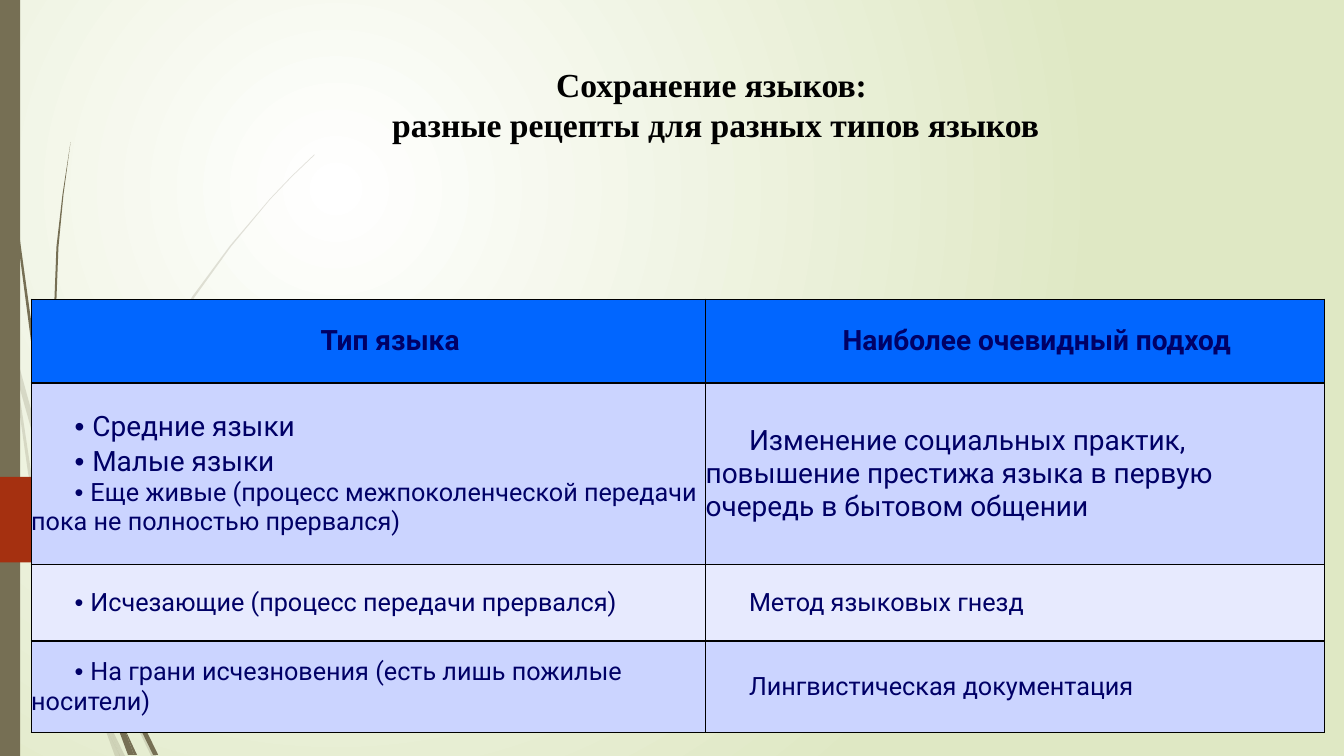
"""Build a slide with a table of language types and approaches to preserving them."""
from dataclasses import dataclass

from lxml import etree
from pptx import Presentation
from pptx import util as u
from pptx.dml.color import RGBColor
from pptx.enum import shapes, text
from pptx.oxml import ns


@dataclass(frozen=True)
class Theme:
    olive: str = "766F54"
    rust: str = "A53010"
    glow: str = "FFFFFF"
    meadow: str = "DFE8C4"
    ink: str = "000000"
    navy: str = "000066"
    header: str = "0166FF"
    bands: tuple = ("CBD4FF", "E7EAFE")
    title_font: str = "Times New Roman"
    body_font: str = "Roboto"
    bullet_font: str = "Arial"
    title_size: int = 24
    large: int = 20
    small: int = 18
    border: float = 1
    indent: int = 31


PALE_BLADES = [
    [(11, 350), (9, 322), (0, 282), (0, 299), (10, 344)],
    [(58, 522), (84, 599), (85, 586), (62, 520), (14, 345), (17, 376)],
    [(92, 607), (88, 596), (88, 610), (123, 694), (150, 750), (155, 750), (127, 692)],
    [(119, 750), (124, 750), (105, 711)],
    [(93, 683), (70, 619), (31, 469), (17, 376), (11, 350), (28, 470), (65, 621),
     (92, 693), (101, 714), (99, 707)],
    [(84, 599), (87, 646), (93, 683), (96, 692), (105, 711), (103, 706), (91, 646),
     (88, 610), (88, 608)],
    [(88, 584), (92, 522), (110, 462), (132, 405), (160, 349), (193, 295), (229, 245),
     (268, 198), (290, 175), (312, 154), (312, 153), (289, 175), (268, 197), (228, 244),
     (191, 294), (158, 348), (129, 403), (107, 461), (89, 522), (85, 584), (88, 596)],
    [(101, 714), (114, 750), (119, 750)],
    [(88, 608), (88, 596), (85, 586), (84, 599)],
    [(96, 692), (93, 683), (99, 707), (101, 714), (119, 750), (105, 711)],
]
DARK_BLADES = [
    [(7, 110), (17, 233), (33, 355), (56, 477), (57, 481), (55, 453), (36, 355),
     (19, 232), (8, 109), (5, 48), (4, 0), (3, 0), (4, 48)],
    [(88, 592), (106, 645), (106, 631), (93, 590), (60, 472), (64, 505)],
    [(113, 649), (110, 641), (111, 656), (132, 708), (152, 749), (157, 749), (136, 706)],
    [(110, 691), (98, 657), (72, 556), (64, 505), (57, 477), (68, 557), (93, 659),
     (111, 708), (117, 722), (116, 717)],
    [(60, 472), (58, 453), (54, 349), (58, 245), (63, 193), (70, 141), (62, 193),
     (56, 245), (52, 349), (55, 449)],
    [(133, 749), (136, 749), (122, 719)],
    [(57, 477), (64, 505), (60, 472), (55, 449), (55, 453)],
    [(111, 633), (125, 552), (158, 476), (205, 406), (231, 374), (245, 359), (261, 344),
     (260, 344), (245, 358), (231, 373), (204, 405), (156, 474), (122, 551), (106, 631),
     (110, 641)],
    [(117, 722), (127, 749), (131, 749)],
    [(106, 645), (110, 691), (116, 706), (122, 719), (121, 716), (111, 656), (109, 651)],
    [(106, 645), (109, 651), (111, 656), (110, 641), (106, 631)],
    [(116, 706), (110, 691), (116, 717), (117, 722), (130, 749), (133, 749), (122, 719)],
]
PENTAGON = [(0, 473), (147, 473), (151, 474), (190, 513), (190, 517), (151, 556),
            (147, 558), (0, 558)]


class Deck:
    def __init__(self, theme):
        self.theme = theme
        self.prs = Presentation()
        self.prs.slide_width, self.prs.slide_height = u.Pt(960), u.Pt(540)
        self.s = self.prs.slides.add_slide(self.prs.slide_layouts[5])

    def background(self):
        fill = self.s.background.fill
        fill.gradient()
        for stop, color in zip(fill.gradient_stops, (self.theme.glow, self.theme.meadow)):
            stop.color.rgb = RGBColor.from_string(color)
        grad = self.s.background._cSld.find(".//" + ns.qn("a:gradFill"))
        grad.remove(grad.find(ns.qn("a:lin")))
        circle = etree.SubElement(grad, ns.qn("a:path"), path="circle")
        etree.SubElement(circle, ns.qn("a:fillToRect"), l="50000", t="50000",
                         r="100000", b="100000")

    def paint(self, sp, color, alpha=100):
        sp.shadow.inherit = False
        sp.line.fill.background()
        sp.fill.solid()
        sp.fill.fore_color.rgb = RGBColor.from_string(color)
        if alpha < 100:
            clr = sp._element.spPr.find(".//" + ns.qn("a:srgbClr"))
            etree.SubElement(clr, ns.qn("a:alpha"), val=str(alpha * 1000))

    def outline(self, points, color, alpha=100):
        builder = self.s.shapes.build_freeform(*points[0], scale=u.Pt(0.72))
        builder.add_line_segments(points[1:], close=True)
        self.paint(builder.convert_to_shape(), color, alpha)

    def bar(self, left, top, width, height, color):
        box = map(u.Pt, (left, top, width, height))
        self.paint(self.s.shapes.add_shape(shapes.MSO_SHAPE.RECTANGLE, *box), color)

    def font(self, p, name, size, color, bold=False):
        p.font.name, p.font.size, p.font.bold = name, u.Pt(size), bold
        p.font.color.rgb = RGBColor.from_string(color)

    def title(self, lines, left, top, width, height):
        sp = self.s.shapes.title
        sp.left, sp.top, sp.width, sp.height = map(u.Pt, (left, top, width, height))
        tf = sp.text_frame
        tf.text = "\n".join(lines)
        tf.word_wrap, tf.auto_size = True, text.MSO_AUTO_SIZE.NONE
        tf.vertical_anchor = text.MSO_ANCHOR.TOP
        for p in tf.paragraphs:
            p.alignment = text.PP_ALIGN.CENTER
            self.font(p, self.theme.title_font, self.theme.title_size, self.theme.ink, True)

    def cell(self, cell, lines, fill, header):
        cell.margin_left = cell.margin_right = cell.margin_top = cell.margin_bottom = 0
        cell.vertical_anchor = text.MSO_ANCHOR.MIDDLE
        tcPr = cell._tc.get_or_add_tcPr()
        for side in ("lnL", "lnR", "lnT", "lnB"):
            ln = etree.SubElement(tcPr, ns.qn("a:" + side), w=str(u.Pt(self.theme.border)))
            solid = etree.SubElement(ln, ns.qn("a:solidFill"))
            etree.SubElement(solid, ns.qn("a:srgbClr"), val=self.theme.ink)
        cell.fill.solid()
        cell.fill.fore_color.rgb = RGBColor.from_string(fill)
        tf = cell.text_frame
        for i, (size, line, after) in enumerate(lines):
            p = tf.add_paragraph() if i else tf.paragraphs[0]
            p.alignment = text.PP_ALIGN.CENTER if header else text.PP_ALIGN.LEFT
            p.space_after = u.Pt(after)
            pPr = p._p.get_or_add_pPr()
            pPr.set("marL", "0")
            pPr.set("indent", str(u.Pt(self.theme.indent)))
            self.font(p, self.theme.body_font, size, self.theme.navy, header)
            if line.startswith("• "):
                r = p.add_run()
                r.text, r.font.name = "• ", self.theme.bullet_font
            p.add_run().text = line.removeprefix("• ")

    def table(self, rows, left, top, widths, heights):
        box = map(u.Pt, (left, top, sum(widths), sum(heights)))
        table = self.s.shapes.add_table(len(rows), len(widths), *box).table
        table.first_row = table.horz_banding = False
        for column, width in zip(table.columns, widths):
            column.width = u.Pt(width)
        for i, (row, height) in enumerate(zip(rows, heights)):
            table.rows[i].height = u.Pt(height)
            fill = self.theme.bands[(i - 1) % 2] if i else self.theme.header
            for j, lines in enumerate(row):
                self.cell(table.cell(i, j), lines, fill, i == 0)


def main():
    theme = Theme()
    large, small = theme.large, theme.small
    deck = Deck(theme)
    deck.background()
    for blade in PALE_BLADES:
        deck.outline(blade, theme.olive, 20)
    for blade in DARK_BLADES:
        deck.outline(blade, theme.olive)
    deck.bar(0, 0, 14.4, 540, theme.olive)
    deck.outline(PENTAGON, theme.rust)
    rows = [
        ([(large, "Тип языка", 0)], [(large, "Наиболее очевидный подход", 0)]),
        ([(large, "• Средние языки", 1.4),
          (large, "• Малые языки", 0),
          (small, "• Еще живые (процесс межпоколенческой передачи "
                  "пока не полностью прервался)", 0)],
         [(large, "Изменение социальных практик, повышение престижа языка "
                  "в первую очередь в бытовом общении", 0)]),
        ([(small, "• Исчезающие (процесс передачи прервался)", 0)],
         [(small, "Метод языковых гнезд", 0)]),
        ([(small, "• На грани исчезновения (есть лишь пожилые носители)", 0)],
         [(small, "Лингвистическая документация", 0)]),
    ]
    deck.table(rows, 22.3, 213.8, (481.7, 442.1), (59.8, 129.6, 54.7, 65.5))
    deck.title(("Сохранение языков: ", "разные рецепты для разных типов языков"),
               135.4, 41.8, 751.7, 65.5)
    deck.prs.save("out.pptx")


if __name__ == "__main__":
    main()
